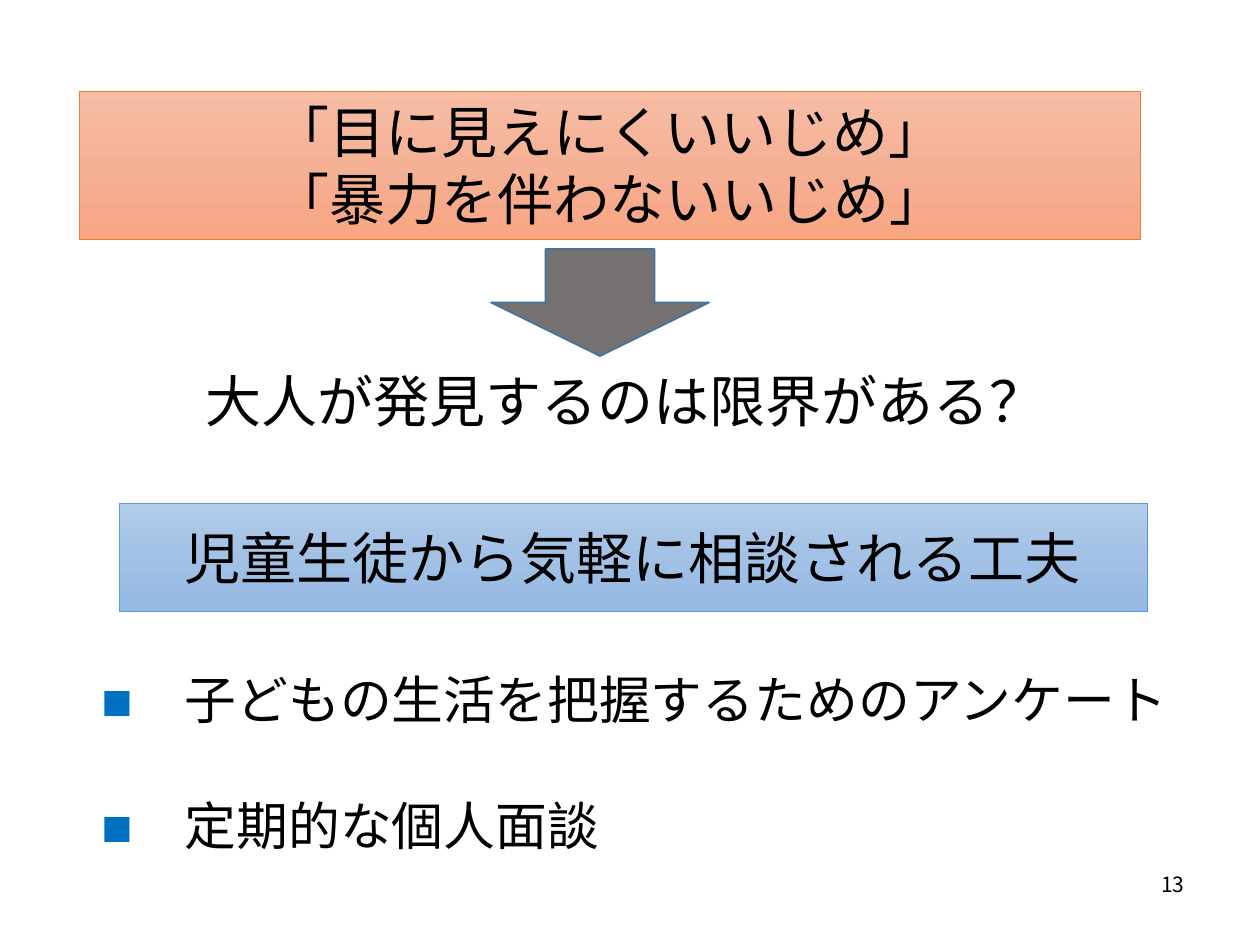
from lxml.etree import SubElement
from pptx import Presentation
from pptx.dml.color import RGBColor
from pptx.enum.shapes import MSO_SHAPE
from pptx.enum.text import MSO_ANCHOR, MSO_AUTO_SIZE, PP_ALIGN
from pptx.oxml.ns import qn
from pptx.util import Pt

"""Build the slide on bullying that adults find hard to notice."""

PX = 914400 / 126
BLACK, BLUE = "000000", "0070C0"
LATIN, JAPANESE = "Arial", "Noto Sans CJK JP"

HEADING = ["「目に見えにくいいじめ」", "「暴力を伴わないいじめ」"]
QUESTION = ["大人が発見するのは限界がある？"]
PROPOSAL = ["児童生徒から気軽に相談される工夫"]
MEASURES = ["子どもの生活を把握するためのアンケート", "定期的な個人面談"]
PAGE = ["13"]

HEADING_BOX = (79, 91, 1061, 149)
ARROW_BOX = (491, 249, 218, 107)
QUESTION_BOX = (95, 360, 1062, 100)
PROPOSAL_BOX = (119, 503, 1028, 109)
MEASURES_BOX = (89, 662, 1134, 180)
PAGE_BOX = (932, 859, 265, 50)

ORANGE_STOPS = ("F7BDA5", "F5B196", "F8A582")
BLUE_STOPS = ("B1CBE9", "A3C1E5", "93B9E4")


def color(value):
    return RGBColor.from_string(value)


def emu(box):
    return [round(length * PX) for length in box]


def outline(shape, line_color, width):
    shape.line.color.rgb = color(line_color)
    shape.line.width = Pt(width)


def gradient(shape, stops):
    shape.fill.gradient()
    shape.fill.gradient_angle = 270
    stop_list = shape.fill._fill._gradFill.find(qn("a:gsLst"))
    for old_stop in list(stop_list):
        stop_list.remove(old_stop)
    for index, stop_color in enumerate(stops):
        stop = SubElement(stop_list, qn("a:gs"), pos=str(index * 50000))
        SubElement(stop, qn("a:srgbClr"), val=stop_color)


def write(shape, lines, size=32, font=LATIN, align=PP_ALIGN.CENTER,
          anchor=MSO_ANCHOR.TOP, gap=0):
    frame = shape.text_frame
    frame.word_wrap = True
    frame.auto_size = MSO_AUTO_SIZE.NONE
    frame.vertical_anchor = anchor
    for index, runs in enumerate(lines):
        paragraph = frame.add_paragraph() if index else frame.paragraphs[0]
        paragraph.alignment = align
        paragraph.space_before = Pt(gap if index else 0)
        for text, text_color in runs:
            run = paragraph.add_run()
            run.text = text
            run.font.size = Pt(size)
            run.font.name = font
            run.font.color.rgb = color(text_color)
            SubElement(run.font._element, qn("a:ea"), typeface=font)


def black(lines):
    return [[(line, BLACK)] for line in lines]


def main():
    deck = Presentation()
    deck.slide_width, deck.slide_height = emu((1260, 945))
    slide = deck.slides.add_slide(deck.slide_layouts[5])
    shapes = slide.shapes

    heading = shapes.title
    heading.left, heading.top, heading.width, heading.height = emu(HEADING_BOX)
    gradient(heading, ORANGE_STOPS)
    outline(heading, "ED7D31", 0.5)
    write(heading, black(HEADING))

    question = shapes.add_textbox(*emu(QUESTION_BOX))
    write(question, black(QUESTION))

    proposal = shapes.add_shape(MSO_SHAPE.RECTANGLE, *emu(PROPOSAL_BOX))
    proposal.shadow.inherit = False
    gradient(proposal, BLUE_STOPS)
    outline(proposal, "5B9BD5", 0.5)
    write(proposal, black(PROPOSAL), anchor=MSO_ANCHOR.MIDDLE)

    measures = shapes.add_textbox(*emu(MEASURES_BOX))
    marked = [[("■", BLUE), ("　" + measure, BLACK)] for measure in MEASURES]
    write(measures, marked, size=29.6, align=PP_ALIGN.LEFT, gap=36)

    arrow = shapes.add_shape(MSO_SHAPE.DOWN_ARROW, *emu(ARROW_BOX))
    arrow.shadow.inherit = False
    arrow.fill.solid()
    arrow.fill.fore_color.rgb = color("767171")
    outline(arrow, "43739E", 1)

    page = shapes.add_textbox(*emu(PAGE_BOX))
    write(page, black(PAGE), size=12, font=JAPANESE, align=PP_ALIGN.RIGHT,
          anchor=MSO_ANCHOR.MIDDLE)

    deck.save("out.pptx")


if __name__ == "__main__":
    main()
